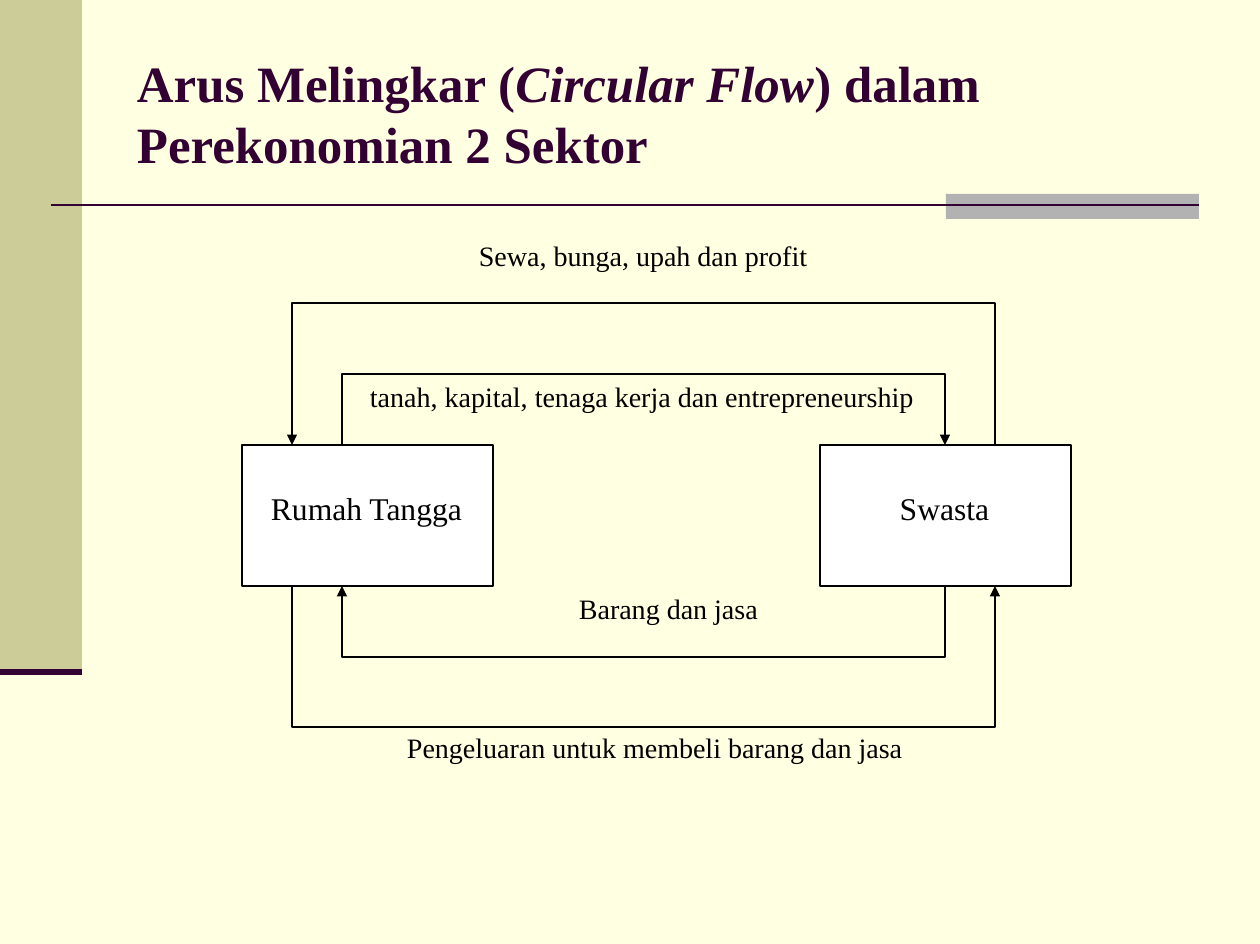
from dataclasses import dataclass

from lxml.etree import SubElement
from pptx import Presentation
from pptx.dml.color import RGBColor
from pptx.enum.shapes import MSO_CONNECTOR as Connector, MSO_SHAPE as Preset
from pptx.enum.text import MSO_ANCHOR as Anchor, PP_ALIGN as Align
from pptx.oxml.ns import qn
from pptx.slide import Slide
from pptx.text.text import TextFrame
from pptx.util import Emu, Pt

EMU_PER_PX = 914400 / 126.4
FONT = "Times New Roman"
CREAM = RGBColor(0xFF, 0xFF, 0xE1)
KHAKI = RGBColor(0xCC, 0xCC, 0x99)
GREY = RGBColor(0xB2, 0xB2, 0xB2)
PLUM = RGBColor(0x33, 0x00, 0x33)
BLACK = RGBColor(0x00, 0x00, 0x00)
WHITE = RGBColor(0xFF, 0xFF, 0xFF)


@dataclass(frozen=True)
class Box:
    left: int
    top: int
    width: int
    height: int
    fill: RGBColor
    text: str = ""


@dataclass(frozen=True)
class Label:
    left: int
    top: int
    width: int
    text: str


@dataclass(frozen=True)
class Flow:
    """A three-sided route from one sector to the other."""
    start_x: int
    end_x: int
    box_y: int
    turn_y: int


BANDS = [
    Box(0, 0, 82, 672, KHAKI),
    Box(946, 194, 253, 25, GREY),
    Box(0, 669, 82, 6, PLUM),
]
SECTOR_TOP, SECTOR_BOTTOM = 445, 586
SECTORS = [
    Box(left, SECTOR_TOP, 251, SECTOR_BOTTOM - SECTOR_TOP, WHITE, name)
    for left, name in ((242, "Rumah Tangga"), (820, "Swasta"))
]
OUTER_LEFT, INNER_LEFT, INNER_RIGHT, OUTER_RIGHT = 292, 342, 945, 995
FLOWS = [
    Flow(INNER_LEFT, INNER_RIGHT, SECTOR_TOP, 374),
    Flow(OUTER_RIGHT, OUTER_LEFT, SECTOR_TOP, 303),
    Flow(INNER_RIGHT, INNER_LEFT, SECTOR_BOTTOM, 657),
    Flow(OUTER_LEFT, OUTER_RIGHT, SECTOR_BOTTOM, 727),
]
LABELS = [
    Label(479, 238, 340, "Sewa, bunga, upah dan profit"),
    Label(370, 379, 560, "tanah, kapital, tenaga kerja dan entrepreneurship"),
    Label(579, 591, 190, "Barang dan jasa"),
    Label(407, 730, 510, "Pengeluaran untuk membeli barang dan jasa"),
]


def px(value: int) -> Emu:
    return Emu(round(value * EMU_PER_PX))


def clear_margins(frame: TextFrame) -> None:
    frame.word_wrap = True
    frame.margin_left = frame.margin_right = 0
    frame.margin_top = frame.margin_bottom = 0


def style_para(para, size: int, color: RGBColor, bold: bool = False) -> None:
    para.font.name = FONT
    para.font.size = Pt(size)
    para.font.color.rgb = color
    para.font.bold = bold


def add_frame(page: Slide, left: int, top: int, width: int, height: int) -> TextFrame:
    frame = page.shapes.add_textbox(px(left), px(top), px(width), px(height)).text_frame
    clear_margins(frame)
    return frame


def draw_box(page: Slide, box: Box) -> None:
    shape = page.shapes.add_shape(
        Preset.RECTANGLE, px(box.left), px(box.top), px(box.width), px(box.height))
    shape.shadow.inherit = False
    shape.fill.solid()
    shape.fill.fore_color.rgb = box.fill
    if not box.text:
        shape.line.fill.background()
        return
    shape.line.color.rgb = BLACK
    shape.line.width = Pt(0.75)
    frame = shape.text_frame
    clear_margins(frame)
    frame.margin_bottom = px(16)
    frame.margin_right = px(2)
    frame.vertical_anchor = Anchor.MIDDLE
    para = frame.paragraphs[0]
    para.text = box.text
    para.alignment = Align.CENTER
    style_para(para, 18, BLACK)


def draw_rule(page: Slide) -> None:
    rule = page.shapes.add_connector(
        Connector.STRAIGHT, px(51), px(205), px(1199), px(205))
    rule.line.color.rgb = PLUM
    rule.line.width = Pt(1.5)
    SubElement(rule._element.spPr, qn("a:effectLst"))


def draw_flow(page: Slide, flow: Flow) -> None:
    builder = page.shapes.build_freeform(flow.start_x, flow.box_y, scale=EMU_PER_PX)
    builder.add_line_segments(
        [(flow.start_x, flow.turn_y), (flow.end_x, flow.turn_y),
         (flow.end_x, flow.box_y)], close=False)
    route = builder.convert_to_shape()
    route.shadow.inherit = False
    route.fill.background()
    route.line.color.rgb = BLACK
    route.line.width = Pt(0.75)
    SubElement(route.line._get_or_add_ln(), qn("a:tailEnd"),
               type="triangle", w="med", len="med")


def draw_label(page: Slide, label: Label) -> None:
    para = add_frame(page, label.left, label.top, label.width, 34).paragraphs[0]
    para.text = label.text
    style_para(para, 16, BLACK)


def draw_title(page: Slide) -> None:
    para = add_frame(page, 137, 52, 990, 125).paragraphs[0]
    style_para(para, 29, PLUM, bold=True)
    for text, italic in (("Arus Melingkar (", False), ("Circular Flow", True),
                         (") dalam Perekonomian 2 Sektor", False)):
        span = para.add_run()
        span.text = text
        span.font.italic = italic


def main() -> None:
    deck = Presentation()
    deck.slide_width, deck.slide_height = px(1260), px(944)
    page = deck.slides.add_slide(deck.slide_layouts[6])

    # Background, bands and title
    page.background.fill.solid()
    page.background.fill.fore_color.rgb = CREAM
    for band in BANDS:
        draw_box(page, band)
    draw_rule(page)
    draw_title(page)

    # Circular flow diagram
    for sector in SECTORS:
        draw_box(page, sector)
    for flow in FLOWS:
        draw_flow(page, flow)
    for label in LABELS:
        draw_label(page, label)

    deck.save("out.pptx")


if __name__ == "__main__":
    main()
